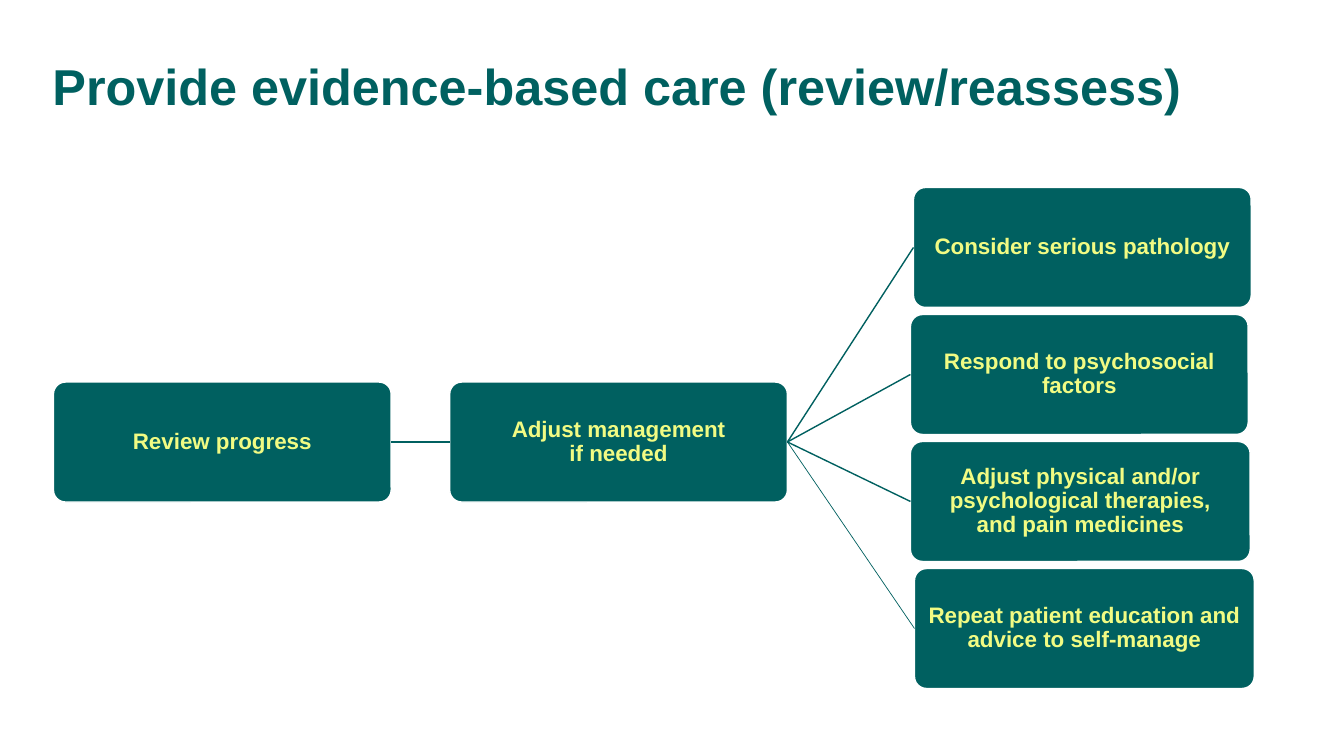
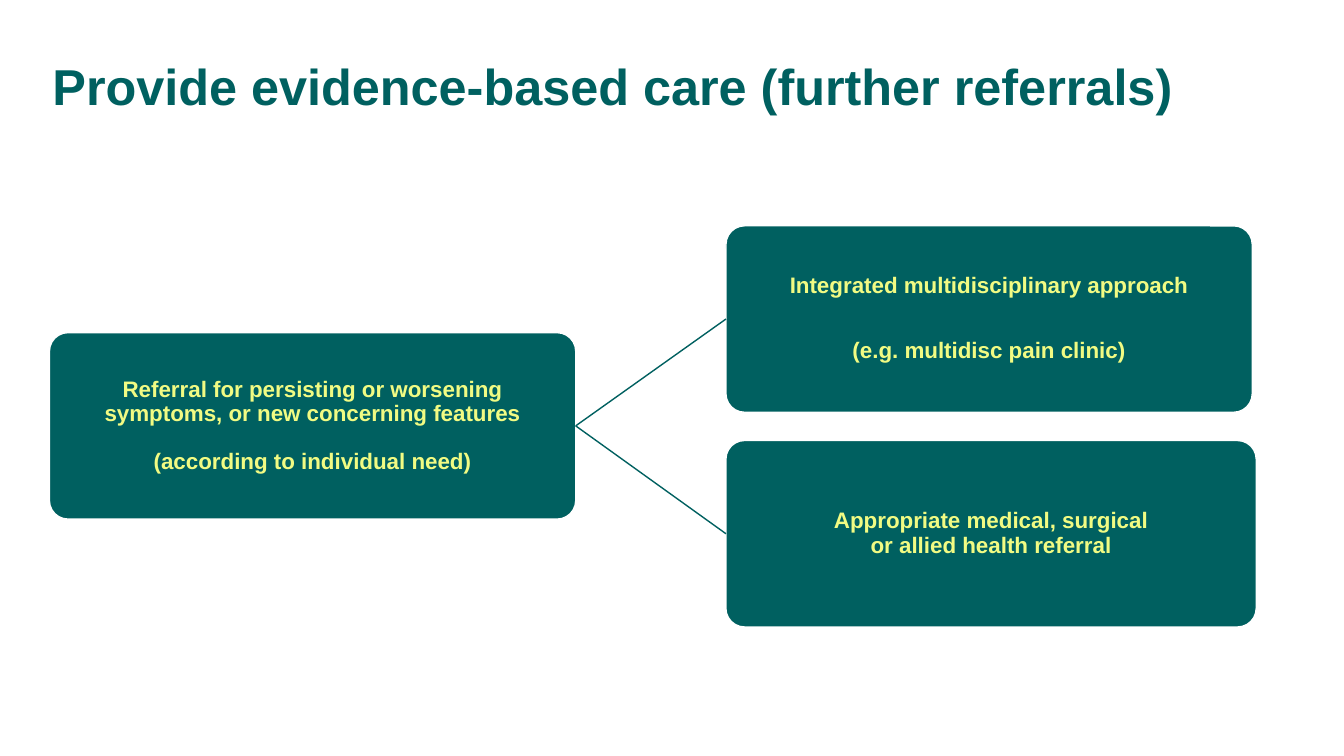
import copy
from dataclasses import dataclass

import lxml.etree
import pptx
import pptx.dml.color
import pptx.enum.shapes
import pptx.enum.text
import pptx.oxml.ns
import pptx.util

Inches = pptx.util.Inches
Pt = pptx.util.Pt
qn = pptx.oxml.ns.qn
ALIGN = pptx.enum.text.PP_ALIGN
ANCHOR = pptx.enum.text.MSO_ANCHOR
LEFT_SIDE, RIGHT_SIDE = 1, 3


@dataclass(frozen=True)
class Theme:
    teal: str = "006060"
    yellow: str = "F1FB83"
    white: str = "FFFFFF"
    font: str = "Arial"
    title_size: int = 36
    box_size: int = 16
    line_spacing: float = 0.9
    corner: float = 0.1
    line_width: float = 1


THEME = Theme()


def rgb(value):
    return pptx.dml.color.RGBColor.from_string(value)


# Text
def write_text(text_frame, text, *, size, color, align, gap=0):
    """Write paragraphs split at blank lines; a single newline is a line break."""
    for index, block in enumerate(text.split("\n\n")):
        paragraph = text_frame.add_paragraph() if index else text_frame.paragraphs[0]
        paragraph.alignment = align
        paragraph.line_spacing = THEME.line_spacing
        paragraph.space_before = Pt(gap if index else 0)
        for number, line in enumerate(block.split("\n")):
            if number:
                paragraph.add_line_break()
            run = paragraph.add_run()
            run.text = line
            run.font.name = THEME.font
            run.font.size = Pt(size)
            run.font.bold = True
            run.font.color.rgb = rgb(color)
        # Line breaks take the size of the text around them
        for line_break in paragraph._p.findall(qn("a:br")):
            line_break.append(copy.deepcopy(run._r.rPr))


def set_margins(text_frame, left, top, right, bottom):
    text_frame.margin_left, text_frame.margin_top = Inches(left), Inches(top)
    text_frame.margin_right, text_frame.margin_bottom = Inches(right), Inches(bottom)


# Shared layout
def prepare_layout(presentation):
    layout = presentation.slide_layouts.get_by_name("Title Only")
    title = layout.placeholders[0]
    title.left, title.top = Inches(0.52), Inches(0.56)
    title.width, title.height = Inches(12.13), Inches(1.33)
    frame = title.text_frame
    frame.word_wrap = True
    frame.auto_size = pptx.enum.text.MSO_AUTO_SIZE.NONE
    frame.vertical_anchor = ANCHOR.TOP
    set_margins(frame, 0, 0.05, 0.1, 0.05)
    return layout


def add_slide(presentation, layout, title):
    slide = presentation.slides.add_slide(layout)
    write_text(slide.shapes.title.text_frame, title, size=THEME.title_size,
               color=THEME.teal, align=ALIGN.LEFT)
    return slide


# Diagram parts
def add_box(slide, text, left, top, width, height, gap=0):
    box = slide.shapes.add_shape(
        pptx.enum.shapes.MSO_SHAPE.ROUNDED_RECTANGLE,
        Inches(left), Inches(top), Inches(width), Inches(height))
    box.adjustments[0] = THEME.corner
    box.shadow.inherit = False
    box.fill.solid()
    box.fill.fore_color.rgb = rgb(THEME.teal)
    box.line.color.rgb = rgb(THEME.white)
    box.line.width = Pt(THEME.line_width)
    frame = box.text_frame
    frame.word_wrap = True
    frame.vertical_anchor = ANCHOR.MIDDLE
    set_margins(frame, 0.01, 0.01, 0.01, 0.01)
    write_text(frame, text, size=THEME.box_size, color=THEME.yellow,
               align=ALIGN.CENTER, gap=gap)
    return box


def join(slide, source, target, width=THEME.line_width):
    connector = slide.shapes.add_connector(
        pptx.enum.shapes.MSO_CONNECTOR.STRAIGHT, 0, 0, 0, 0)
    connector.begin_connect(source, RIGHT_SIDE)
    connector.end_connect(target, LEFT_SIDE)
    connector.line.color.rgb = rgb(THEME.teal)
    connector.line.width = Pt(width)
    lxml.etree.SubElement(connector._element.spPr, qn("a:effectLst"))


# Slides
def build_review_slide(presentation, layout):
    slide = add_slide(presentation, layout,
                      "Provide evidence-based care (review/reassess)")
    width, height = 3.35, 1.19
    review = add_box(slide, "Review progress", 0.53, 3.79, width, height)
    adjust = add_box(slide, "Adjust management\nif needed", 4.46, 3.79, width, height)
    join(slide, review, adjust)

    # Text, left, width and connector width of each action
    actions = [
        ("Consider serious pathology", 9.06, 3.35, 1),
        ("Respond to psychosocial factors", 9.03, 3.35, 1),
        ("Adjust physical and/or\npsychological therapies,\nand pain medicines", 9.03, 3.37, 1),
        ("Repeat patient education and advice to self-manage", 9.07, 3.37, 0.5),
    ]
    for row, (text, left, action_width, line_width) in enumerate(actions):
        action = add_box(slide, text, left, 1.86 + 1.26 * row, action_width, height)
        join(slide, adjust, action, line_width)


def build_referral_slide(presentation, layout):
    slide = add_slide(presentation, layout,
                      "Provide evidence-based care (further referrals)")
    height = 1.85
    referral = add_box(
        slide,
        "Referral for persisting or worsening\nsymptoms, or new concerning features"
        "\n\n(according to individual need)",
        0.49, 3.3, 5.22, height, gap=17)
    options = [
        ("Integrated multidisciplinary approach\n\n(e.g. multidisc pain clinic)", 5.22),
        ("Appropriate medical, surgical\nor allied health referral", 5.26),
    ]
    for row, (text, width) in enumerate(options):
        option = add_box(slide, text, 7.2, 2.24 + 2.13 * row, width, height, gap=29)
        join(slide, referral, option)


def main():
    presentation = pptx.Presentation()
    presentation.slide_width = Inches(13.33)
    presentation.slide_height = Inches(7.5)
    layout = prepare_layout(presentation)
    build_review_slide(presentation, layout)
    build_referral_slide(presentation, layout)
    presentation.save("out.pptx")


if __name__ == "__main__":
    main()
